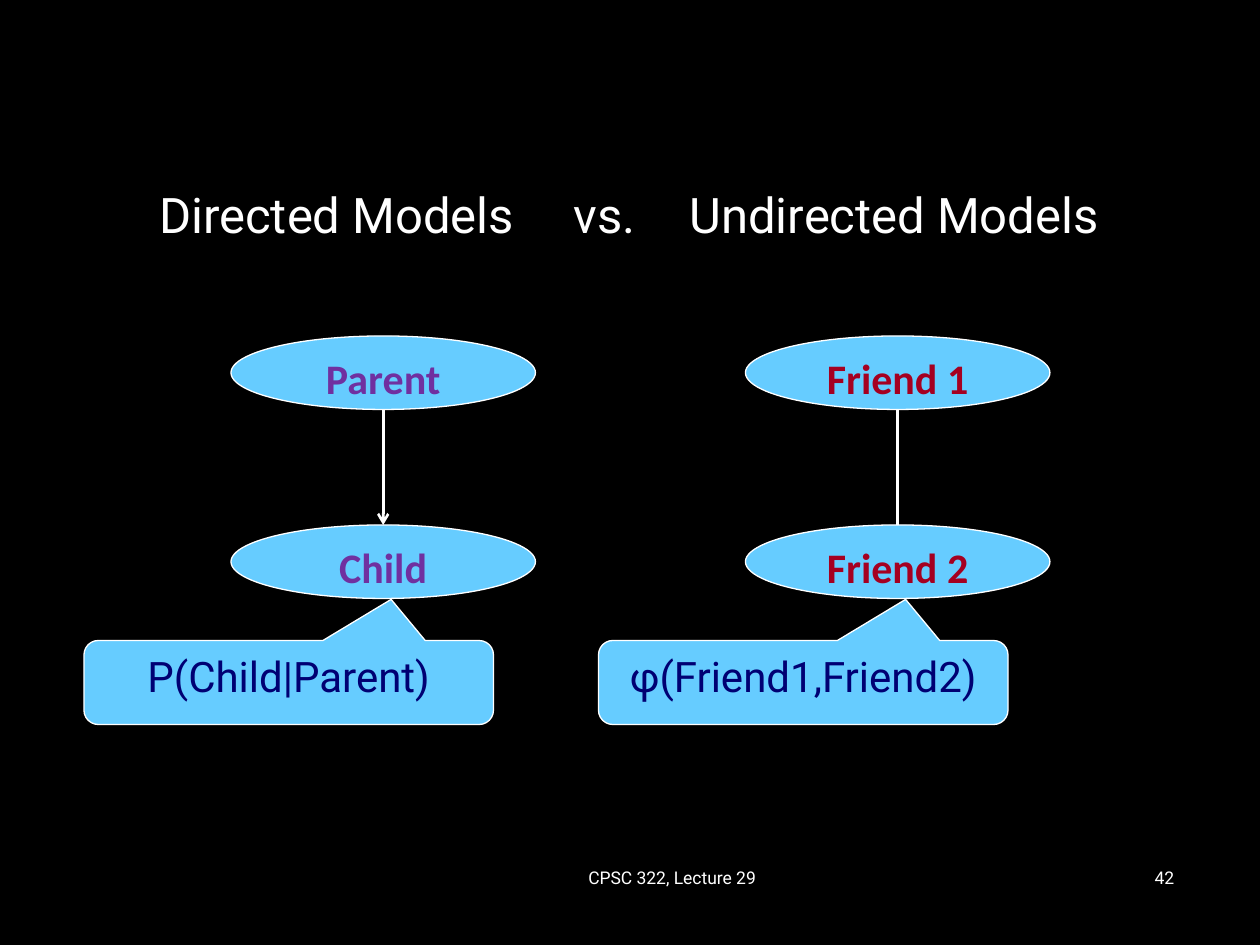
from lxml import etree
from pptx import Presentation
from pptx import util as u
from pptx.dml.color import RGBColor
from pptx.enum import shapes, text
from pptx.oxml.ns import qn

LEFT, MID, RIGHT = text.PP_ALIGN.LEFT, text.PP_ALIGN.CENTER, text.PP_ALIGN.RIGHT
OVAL = shapes.MSO_SHAPE.OVAL
CALLOUT = shapes.MSO_SHAPE.ROUNDED_RECTANGULAR_CALLOUT
WHITE, SKY, NAVY, PURPLE, RED = "FFFFFF", "66CCFF", "000073", "7030A0", "A50021"


def color(code):
    """Turn a hex string into a colour."""
    return RGBColor.from_string(code)


def grid(*cells):
    """Turn grid units, twelve to the inch, into lengths."""
    return [u.Inches(cell / 12) for cell in cells]


class Board:
    """Holds the style and the current slide."""

    font, bold_font = "Roboto", "Calibri"

    def __init__(self, deck):
        """Add a blank slide with a black ground."""
        self.slide = deck.slides.add_slide(deck.slide_layouts[6])
        ground = self.slide.background.fill
        ground.solid()
        ground.fore_color.rgb = color("000000")

    def words(self, shape, wording, size, ink, align, bold=False):
        """Put one styled run at the top of a shape."""
        frame = shape.text_frame
        frame.word_wrap = True
        frame.vertical_anchor = text.MSO_ANCHOR.TOP
        para = frame.paragraphs[0]
        para.alignment = align
        run = para.add_run()
        run.text = wording
        run.font.name = self.bold_font if bold else self.font
        run.font.size = u.Pt(size)
        run.font.bold = bold
        run.font.color.rgb = color(ink)
        return para

    def label(self, place, wording, size, align=LEFT, tab=None):
        """Add a text box, with a tab stop if one is given in inches."""
        box = self.slide.shapes.add_textbox(*grid(*place))
        para = self.words(box, wording, size, WHITE, align)
        if tab:
            stops = etree.SubElement(para._p.get_or_add_pPr(), qn("a:tabLst"))
            etree.SubElement(stops, qn("a:tab"), pos=str(u.Inches(tab)), algn="l")

    def shape(self, kind, place, wording, ink, bold=False, adjust=()):
        """Add a filled shape with centred text."""
        item = self.slide.shapes.add_shape(kind, *grid(*place))
        item.shadow.inherit = False
        item.fill.solid()
        item.fill.fore_color.rgb = color(SKY)
        item.line.color.rgb = color(WHITE)
        item.line.width = u.Pt(0.75)
        for spot, value in enumerate(adjust):
            item.adjustments[spot] = value
        self.words(item, wording, 24, ink, MID, bold)

    def link(self, ends, arrow):
        """Add a straight line, with an arrowhead if asked."""
        line = self.slide.shapes.add_connector(
            shapes.MSO_CONNECTOR.STRAIGHT, *grid(*ends))
        line.line.color.rgb = color(WHITE)
        line.line.width = u.Pt(1.5)
        props = line._element.spPr
        if arrow:
            etree.SubElement(props.find(qn("a:ln")), qn("a:tailEnd"), type="arrow")
        etree.SubElement(props, qn("a:effectLst"))

    def model(self, left, nodes, ink, rule, arrow):
        """Draw two linked nodes and the callout below them."""
        wide, high, top, step = 29, 7, 32, 18
        for row, name in enumerate(nodes):
            self.shape(OVAL, (left, top + row * step, wide, high), name, ink, True)
        center = left + wide / 2
        self.link((center, top + high, center, top + step), arrow)
        self.shape(CALLOUT, (left - 14, 61, 39, 8), rule, NAVY,
                   adjust=(0.25, -0.99, 0.17))


deck = Presentation()
deck.slide_width, deck.slide_height = grid(120, 90)
board = Board(deck)
board.label((14, 17, 48.5, 54), "Directed Models\tvs.", 28, tab=3.29)
board.label((64.5, 17, 48.5, 54), "Undirected Models", 28)
board.model(22, ("Parent", "Child"), PURPLE, "P(Child|Parent)", True)
board.model(71, ("Friend 1", "Friend 2"), RED, "φ(Friend1,Friend2)", False)
board.label((45, 82, 38, 6), "CPSC 322, Lecture 29", 10, MID)
board.label((88, 82, 25, 6), "42", 10, RIGHT)
deck.save("out.pptx")
